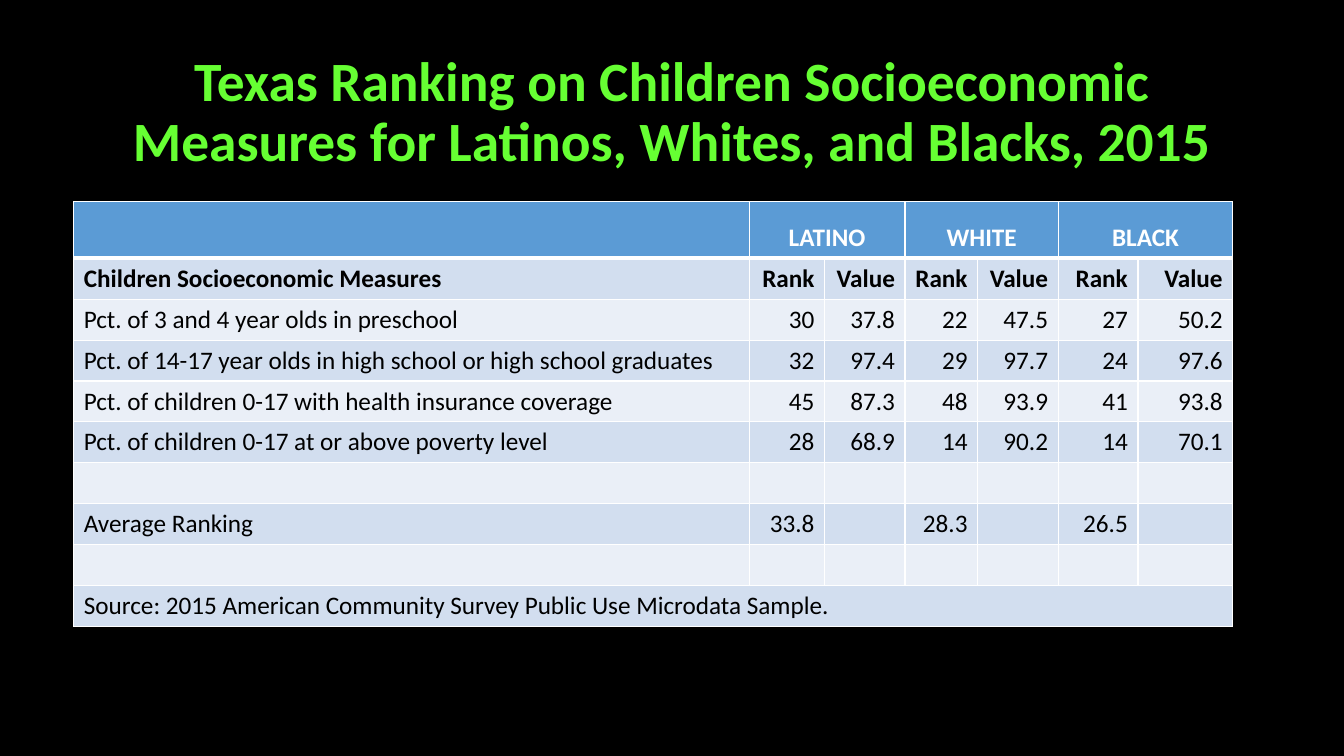
from dataclasses import dataclass

from lxml import etree
from pptx import Presentation
from pptx.dml.color import RGBColor
from pptx.enum.text import MSO_ANCHOR, MSO_AUTO_SIZE, PP_ALIGN
from pptx.oxml.ns import qn
from pptx.slide import Slide
from pptx.table import Table, _Cell
from pptx.text.text import TextFrame
from pptx.util import Cm, Pt

LEFT, CENTER, RIGHT = PP_ALIGN.LEFT, PP_ALIGN.CENTER, PP_ALIGN.RIGHT
TOP, MIDDLE, BOTTOM = MSO_ANCHOR.TOP, MSO_ANCHOR.MIDDLE, MSO_ANCHOR.BOTTOM
NO_AUTOFIT = MSO_AUTO_SIZE.NONE

COLORS = {
    "background": "000000",
    "title": "66FF33",
    "header": "5B9BD5",
    "dark_band": "D2DEEF",
    "light_band": "EAEFF7",
    "white": "FFFFFF",
    "text": "000000",
}
FONT = "Calibri"
TITLE = "Texas Ranking on Children Socioeconomic Measures for Latinos, Whites, and Blacks, 2015"
SOURCE = "Source: 2015 American Community Survey Public Use Microdata Sample."
COLUMN_WIDTHS = (17.02, 1.9, 2.03, 1.83, 2.03, 2.01, 2.39)
HEADER_HEIGHT = 1.43
ROW_HEIGHT = 1.03
GRID_WIDTH = 1
HEADER_RULE_WIDTH = 3


@dataclass(frozen=True)
class MeasureRow:
    label: str = ""
    entries: tuple[str, ...] = ("",) * 6
    bold: bool = False


ROWS = (
    MeasureRow("", ("LATINO", "", "WHITE", "", "BLACK", ""), True),
    MeasureRow("Children Socioeconomic Measures", ("Rank", "Value") * 3, True),
    MeasureRow("Pct. of 3 and 4 year olds in preschool", ("30", "37.8", "22", "47.5", "27", "50.2")),
    MeasureRow(
        "Pct. of 14-17 year olds in high school or high school graduates",
        ("32", "97.4", "29", "97.7", "24", "97.6"),
    ),
    MeasureRow(
        "Pct. of children 0-17 with health insurance coverage",
        ("45", "87.3", "48", "93.9", "41", "93.8"),
    ),
    MeasureRow(
        "Pct. of children 0-17 at or above poverty level",
        ("28", "68.9", "14", "90.2", "14", "70.1"),
    ),
    MeasureRow(),
    MeasureRow("Average Ranking", ("33.8", "", "28.3", "", "26.5", "")),
    MeasureRow(),
    MeasureRow(SOURCE),
)


def color(name: str) -> RGBColor:
    return RGBColor.from_string(COLORS[name])


def write_text(
    text_frame: TextFrame, text: str, size: float, color_name: str, bold: bool, alignment: PP_ALIGN
) -> None:
    text_frame.text = text
    paragraph = text_frame.paragraphs[0]
    paragraph.alignment = alignment
    for run in paragraph.runs:
        run.font.name = FONT
        run.font.size = Pt(size)
        run.font.bold = bold
        run.font.color.rgb = color(color_name)


def add_borders(cell: _Cell, top_width: float, bottom_width: float) -> None:
    widths = {"lnL": GRID_WIDTH, "lnR": GRID_WIDTH, "lnT": top_width, "lnB": bottom_width}
    properties = cell._tc.get_or_add_tcPr()
    for side, width in widths.items():
        line = etree.SubElement(properties, qn(f"a:{side}"), w=str(Pt(width)))
        fill = etree.SubElement(line, qn("a:solidFill"))
        etree.SubElement(fill, qn("a:srgbClr"), val=COLORS["white"])


def fill_row(table: Table, row_index: int, row: MeasureRow) -> None:
    is_header = row_index == 0
    band = "header" if is_header else "dark_band" if row_index % 2 else "light_band"
    top_width = HEADER_RULE_WIDTH if row_index == 1 else GRID_WIDTH
    bottom_width = HEADER_RULE_WIDTH if is_header else GRID_WIDTH
    for column_index, text in enumerate((row.label, *row.entries)):
        cell = table.cell(row_index, column_index)
        add_borders(cell, top_width, bottom_width)
        cell.fill.solid()
        cell.fill.fore_color.rgb = color(band)
        cell.vertical_anchor = BOTTOM if is_header else TOP
        alignment = CENTER if is_header else RIGHT if column_index else LEFT
        write_text(cell.text_frame, text, 18, "white" if is_header else "text", row.bold, alignment)


def add_title(slide: Slide) -> None:
    title = slide.shapes.title
    title.left, title.top, title.width, title.height = Cm(2.33), Cm(1.01), Cm(29.21), Cm(3.68)
    text_frame = title.text_frame
    write_text(text_frame, TITLE, 39.6, "title", True, CENTER)
    text_frame.paragraphs[0].line_spacing = 0.9
    text_frame.vertical_anchor = MIDDLE
    text_frame.auto_size = NO_AUTOFIT
    text_frame.word_wrap = True


def add_ranking_table(slide: Slide) -> None:
    height = HEADER_HEIGHT + ROW_HEIGHT * (len(ROWS) - 1)
    frame = slide.shapes.add_table(
        len(ROWS), len(COLUMN_WIDTHS), Cm(1.86), Cm(5.08), Cm(sum(COLUMN_WIDTHS)), Cm(height)
    )
    table = frame.table
    for column, width in zip(table.columns, COLUMN_WIDTHS):
        column.width = Cm(width)
    for row_index, row in enumerate(ROWS):
        table.rows[row_index].height = Cm(ROW_HEIGHT if row_index else HEADER_HEIGHT)
        fill_row(table, row_index, row)
    for first_column in range(1, len(COLUMN_WIDTHS), 2):
        table.cell(0, first_column).merge(table.cell(0, first_column + 1))
    last_row = len(ROWS) - 1
    table.cell(last_row, 0).merge(table.cell(last_row, len(COLUMN_WIDTHS) - 1))


def main() -> None:
    presentation = Presentation()
    presentation.slide_width, presentation.slide_height = Cm(33.87), Cm(19.05)
    slide = presentation.slides.add_slide(presentation.slide_layouts.get_by_name("Title Only"))
    slide.background.fill.solid()
    slide.background.fill.fore_color.rgb = color("background")
    add_title(slide)
    add_ranking_table(slide)
    presentation.save("out.pptx")


if __name__ == "__main__":
    main()
